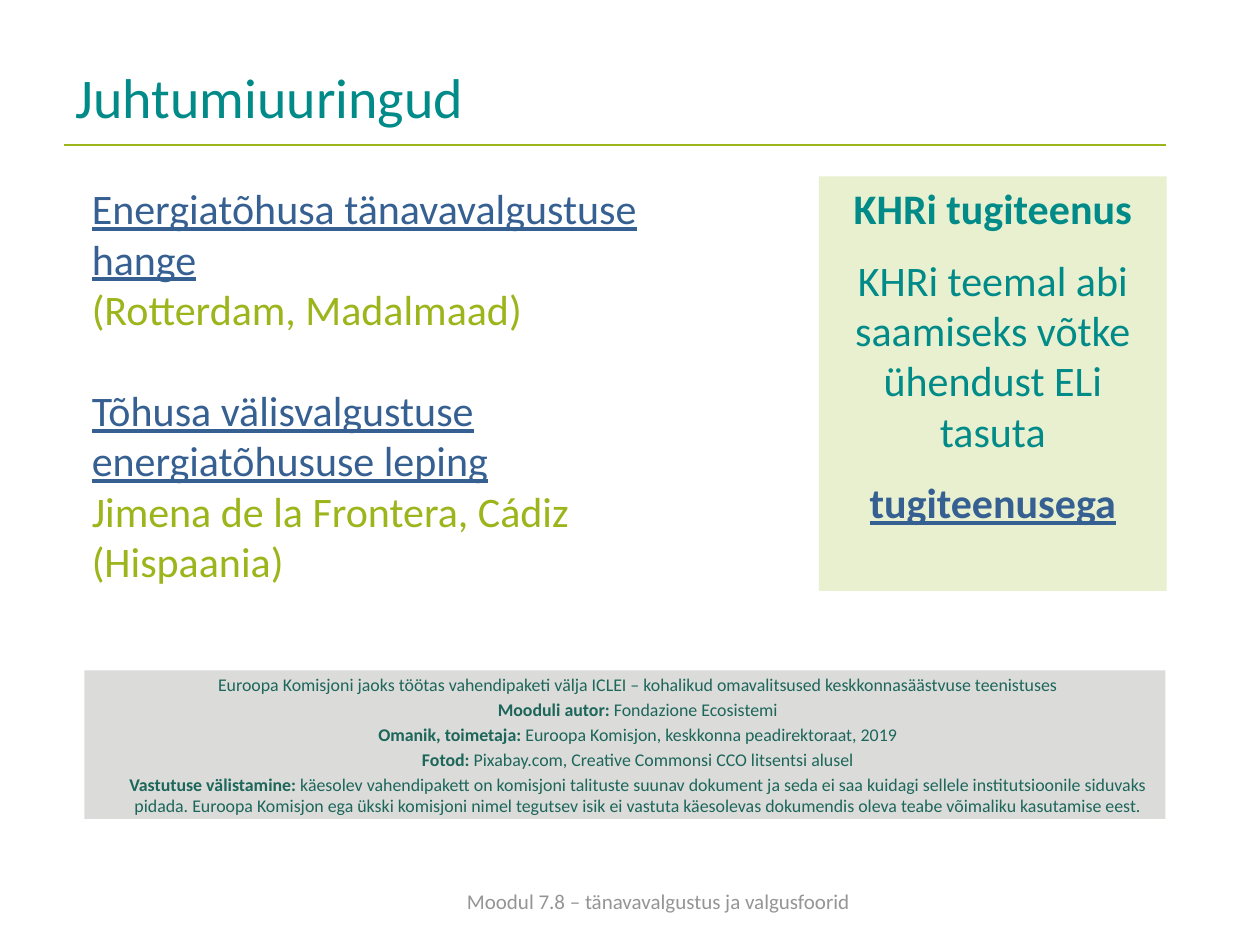
import pptx
import pptx.util
import pptx.dml.color
import pptx.enum.shapes
import pptx.enum.text
import pptx.oxml.ns
import lxml.etree
from dataclasses import dataclass

Pt = pptx.util.Pt
Align = pptx.enum.text.PP_ALIGN
Anchor = pptx.enum.text.MSO_ANCHOR


@dataclass(frozen=True)
class Theme:
    font: str = "Calibri"
    teal: str = "008A88"
    lime: str = "9BB51B"
    blue: str = "366092"
    pine: str = "1C665A"
    gray: str = "959595"
    pale: str = "E8F0D0"
    ash: str = "DBDBDA"
    head: float = 32
    body: float = 24
    foot: float = 12
    fine: float = 10.2


class Deck:
    cols, rows = 100, 75

    def __init__(self, theme):
        self.theme = theme
        self.file = pptx.Presentation()
        self.file.slide_width = pptx.util.Inches(10)
        self.file.slide_height = pptx.util.Inches(7.5)
        self.slide = self.file.slides.add_slide(self.file.slide_layouts[6])

    def place(self, left, top, wide, high):
        col = self.file.slide_width / self.cols
        row = self.file.slide_height / self.rows
        return [round(n) for n in (left * col, top * row, wide * col, high * row)]

    def tint(self, code):
        return pptx.dml.color.RGBColor.from_string(code)

    def rule(self, left, top, wide, color):
        x, y, w, _ = self.place(left, top, wide, 0)
        kind = pptx.enum.shapes.MSO_CONNECTOR.STRAIGHT
        line = self.slide.shapes.add_connector(kind, x, y, x + w, y)
        line.line.color.rgb = self.tint(color)
        line.line.width = Pt(0.75)
        props = line._element.spPr
        lxml.etree.SubElement(props, pptx.oxml.ns.qn("a:effectLst"))

    def text(self, area, paras, size, **style):
        box = self.slide.shapes.add_textbox(*self.place(*area))
        self.fill(box, paras, size, **style)

    def panel(self, area, color, paras, size, **style):
        kind = pptx.enum.shapes.MSO_SHAPE.RECTANGLE
        box = self.slide.shapes.add_shape(kind, *self.place(*area))
        box.shadow.inherit = False
        box.fill.solid()
        box.fill.fore_color.rgb = self.tint(color)
        box.line.fill.background()
        self.fill(box, paras, size, **style)

    def fill(self, box, paras, size, align=Align.LEFT, anchor=Anchor.TOP,
             gaps=(), inset=1):
        frame = box.text_frame
        frame.word_wrap = True
        frame.vertical_anchor = anchor
        frame.margin_left = self.place(inset, 0, 0, 0)[0]
        for i, runs in enumerate(paras):
            para = frame.paragraphs[0] if i == 0 else frame.add_paragraph()
            para.alignment = align
            para.space_before = Pt(gaps[i] if gaps else 0)
            for words, color, marks in runs:
                run = para.add_run()
                run.text = words
                run.font.name = self.theme.font
                run.font.size = Pt(size)
                run.font.color.rgb = self.tint(color)
                run.font.bold = "b" in marks
                run.font.underline = "u" in marks


def main():
    look = Theme()
    deck = Deck(look)

    deck.rule(5.1, 11.5, 87.4, look.lime)
    deck.text((5, 3, 87.5, 9.3), [[("Juhtumiuuringud", look.teal, "")]],
              look.head, anchor=Anchor.MIDDLE)

    cases = [
        ("Energiatõhusa tänavavalgustuse hange", "(Rotterdam, Madalmaad)"),
        ("Tõhusa välisvalgustuse energiatõhususe leping",
         "Jimena de la Frontera, Cádiz (Hispaania)"),
    ]
    lines = []
    for name, town in cases:
        lines += [[(name, look.blue, "u")], [(town, look.lime, "")]]
    deck.text((6.3, 14, 53.9, 47.5), lines, look.body, gaps=(0, 0, 29, 0))

    deck.panel((65, 14, 27.6, 32.9), look.pale, [
        [("KHRi tugiteenus", look.teal, "b")],
        [("KHRi teemal abi saamiseks võtke ühendust ELi tasuta", look.teal, "")],
        [("tugiteenusega", look.blue, "bu")],
    ], look.body, align=Align.CENTER, gaps=(0, 12, 12))

    credits = [
        ("Mooduli autor: ", "Fondazione Ecosistemi"),
        ("Omanik, toimetaja: ", "Euroopa Komisjon, keskkonna peadirektoraat, 2019"),
        ("Fotod:", " Pixabay.com, Creative Commonsi CCO litsentsi alusel"),
        ("Vastutuse välistamine: ",
         "käesolev vahendipakett on komisjoni talituste suunav dokument ja seda "
         "ei saa kuidagi sellele institutsioonile siduvaks pidada. Euroopa "
         "Komisjon ega ükski komisjoni nimel tegutsev isik ei vastuta käesolevas "
         "dokumendis oleva teabe võimaliku kasutamise eest."),
    ]
    notice = [[("Euroopa Komisjoni jaoks töötas vahendipaketi välja ICLEI – kohalikud "
                "omavalitsused keskkonnasäästvuse teenistuses", look.pine, "")]]
    notice += [[(tag, look.pine, "b"), (words, look.pine, "")]
               for tag, words in credits]
    deck.panel((6.7, 53.2, 85.8, 11.8), look.ash, notice, look.fine,
               align=Align.CENTER, anchor=Anchor.MIDDLE,
               gaps=(0, 2, 2, 2, 2), inset=3)

    deck.text((28.5, 69.5, 47.5, 4),
              [[("Moodul 7.8 – tänavavalgustus ja valgusfoorid", look.gray, "")]],
              look.foot, align=Align.CENTER, anchor=Anchor.MIDDLE)

    deck.file.save("out.pptx")


if __name__ == "__main__":
    main()
